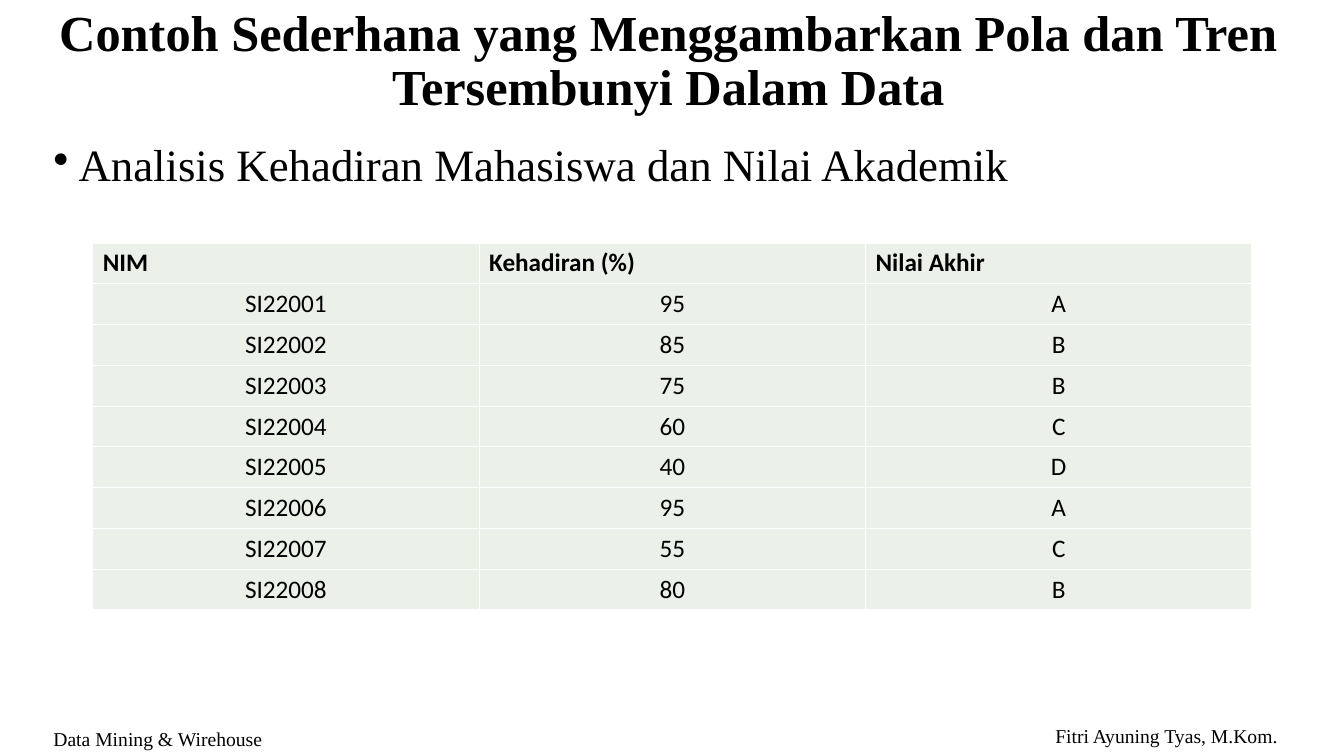
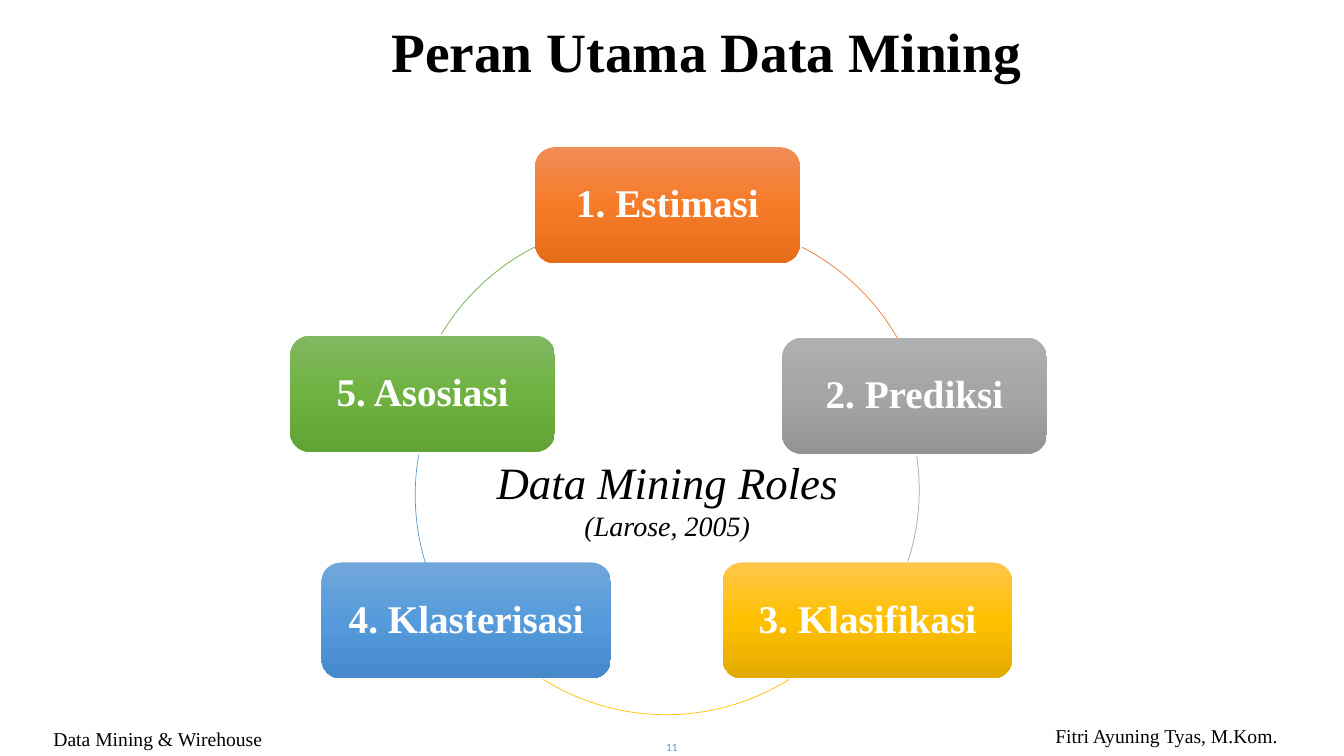
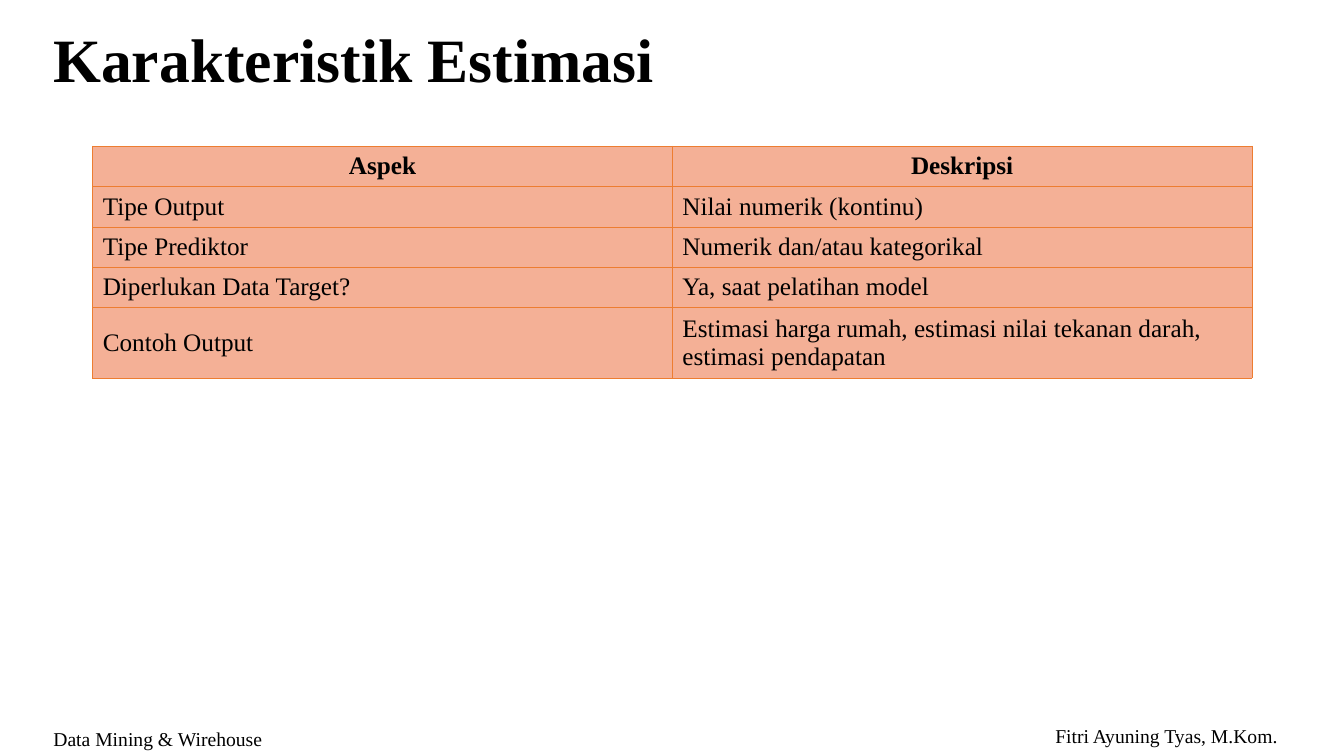
from copy import deepcopy

from pptx import Presentation
from pptx.dml.color import RGBColor
from pptx.enum.shapes import MSO_SHAPE
from pptx.enum.text import MSO_ANCHOR, PP_ALIGN
from pptx.oxml import parse_xml
from pptx.oxml.ns import nsdecls, qn
from pptx.util import Inches, Pt

LEFT, MID, JUST = PP_ALIGN.LEFT, PP_ALIGN.CENTER, PP_ALIGN.JUSTIFY
TOP, HALF = MSO_ANCHOR.TOP, MSO_ANCHOR.MIDDLE
ROUND, ARC = MSO_SHAPE.ROUNDED_RECTANGLE, MSO_SHAPE.ARC

BLACK = RGBColor(0x00, 0x00, 0x00)
WHITE = RGBColor(0xFF, 0xFF, 0xFF)
SAGE = RGBColor(0xEB, 0xF1, 0xE9)
PEACH = RGBColor(0xF4, 0xB0, 0x96)
RUST = RGBColor(0xED, 0x7D, 0x31)
GRAY = RGBColor(0xA5, 0xA5, 0xA5)
GOLD = RGBColor(0xFF, 0xC0, 0x00)
BLUE = RGBColor(0x5B, 0x9B, 0xD5)
GREEN = RGBColor(0x70, 0xAD, 0x47)
RUSTS = RGBColor(0xF1, 0x8C, 0x57), RGBColor(0xF6, 0x7B, 0x28), RGBColor(0xE5, 0x6C, 0x19)
GRAYS = RGBColor(0xAF, 0xAF, 0xAF), GRAY, RGBColor(0x93, 0x93, 0x93)
GOLDS = RGBColor(0xFF, 0xC6, 0x4B), GOLD, RGBColor(0xE3, 0xAB, 0x00)
BLUES = RGBColor(0x71, 0xA6, 0xDB), RGBColor(0x55, 0x9B, 0xDB), RGBColor(0x44, 0x8A, 0xCA)
GREENS = RGBColor(0x81, 0xB8, 0x61), RGBColor(0x6F, 0xB2, 0x42), RGBColor(0x62, 0xA3, 0x36)

SERIF, SANS = "Times New Roman", "Calibri"
PAGE = (0, 0, Inches(13.33), Inches(7.5))
HEAD = (3.23, 1.87, 93, 12.8)
FEET = [
    ("Fitri Ayuning Tyas, M.Kom.", (77.78, 95.07, 18.53, 4.53)),
    ("Data Mining & Wirehouse", (3.23, 95.47, 18.68, 4.53)),
]
MARKS = [
    ("NIM", "Kehadiran (%)", "Nilai Akhir"),
    ("SI22001", "95", "A"),
    ("SI22002", "85", "B"),
    ("SI22003", "75", "B"),
    ("SI22004", "60", "C"),
    ("SI22005", "40", "D"),
    ("SI22006", "95", "A"),
    ("SI22007", "55", "C"),
    ("SI22008", "80", "B"),
]
TRAITS = [
    ("Aspek", "Deskripsi"),
    ("Tipe Output", "Nilai numerik (kontinu)"),
    ("Tipe Prediktor", "Numerik dan/atau kategorikal"),
    ("Diperlukan Data Target?", "Ya, saat pelatihan model"),
    ("Contoh Output", "Estimasi harga rumah, estimasi nilai tekanan darah, estimasi pendapatan"),
]
ROLES = [
    ("1. Estimasi", (32.4, 0, 35), RUSTS, RUST, (23.07, 12.87), (297, 330)),
    ("2. Prediksi", (65.07, 32.87, 35), GRAYS, GRAY, (21.87, 19.13), (351.5, 18)),
    ("3. Klasifikasi", (57.2, 71.65, 38.27), GOLDS, GOLD, (19.07, 17.91), (58, 122)),
    ("4. Klasterisasi", (4.13, 71.65, 38.27), BLUES, BLUE, (16.53, 20), (163, 190)),
    ("5. Asosiasi", (0, 32.52, 35), GREENS, GREEN, (15.6, 12.87), (211, 243)),
]


def span(box, part):
    """Turn percentages of a box into a box on the slide."""
    x, y, w, h = box
    a, b, c, d = part
    return (int(x + w * a / 100), int(y + h * b / 100),
            int(w * c / 100), int(h * d / 100))


def style(item, form):
    """Set each format value on an object."""
    for name, value in form.items():
        setattr(item, name, value)


def put(para, text, size, align=LEFT, tint=BLACK, face=SERIF, lead=None, **form):
    """Write one formatted run into a paragraph."""
    style(para, {"alignment": align, "line_spacing": lead})
    run = para.add_run()
    run.text = text
    style(run.font, {"size": Pt(size), "name": face, **form})
    run.font.color.rgb = tint


def label(slide, box, text, size, anchor=TOP, **form):
    """Add a wrapped text box and return its frame."""
    frame = slide.shapes.add_textbox(*box).text_frame
    style(frame, {"word_wrap": True, "vertical_anchor": anchor})
    put(frame.paragraphs[0], text, size, **form)
    return frame


def point(slide, box, text):
    """Add a bulleted line of body text."""
    para = label(slide, box, text, 32, align=JUST, lead=0.9).paragraphs[0]
    para.space_before = Pt(10)
    props = para._p.get_or_add_pPr()
    props.set("marL", str(Inches(0.25)))
    props.set("indent", str(-Inches(0.25)))
    props.append(parse_xml(f'<a:buChar {nsdecls("a")} char="•"/>'))


def edge(cell, tint, width):
    """Draw the four borders of a cell."""
    props = cell._tc.get_or_add_tcPr()
    for i, side in enumerate("LRTB"):
        props.insert(i, parse_xml(
            f'<a:ln{side} {nsdecls("a")} w="{Pt(width)}"><a:solidFill>'
            f'<a:srgbClr val="{tint}"/></a:solidFill></a:ln{side}>'))


def grid(slide, box, rows, fill, rule, face, aligns):
    """Fill a box with a table whose first row is bold."""
    table = slide.shapes.add_table(len(rows), len(rows[0]), *box).table
    style(table, {"first_row": False, "horz_banding": False})
    for i, row in enumerate(rows):
        for j, text in enumerate(row):
            cell = table.cell(i, j)
            cell.vertical_anchor = HALF
            cell.fill.solid()
            cell.fill.fore_color.rgb = fill
            edge(cell, *rule)
            put(cell.text_frame.paragraphs[0], text, 18,
                align=aligns[i > 0], face=face, bold=i == 0)


def arc(slide, box, tint, turn):
    """Draw a thin arc between two angles of a circle."""
    shape = slide.shapes.add_shape(ARC, *box)
    shape.shadow.inherit = False
    shape.fill.background()
    shape.line.color.rgb = tint
    shape.line.width = Pt(0.5)
    for i, angle in enumerate(turn):
        shape.adjustments[i] = angle * 0.6


def card(slide, box, text, tints):
    """Draw a rounded card with a three-stop gradient."""
    shape = slide.shapes.add_shape(ROUND, *box)
    shape.shadow.inherit = False
    shape.line.fill.background()
    fill = shape.fill
    fill.gradient()
    fill.gradient_angle = 270
    stops = shape._element.spPr.find(".//" + qn("a:gsLst"))
    stops.append(deepcopy(stops[0]))
    for i, (stop, tint) in enumerate(zip(fill.gradient_stops, tints)):
        stop.position = i / 2
        stop.color.rgb = tint
    frame = shape.text_frame
    style(frame, {"word_wrap": True, "vertical_anchor": HALF})
    put(frame.paragraphs[0], text, 28, align=MID, tint=WHITE, lead=0.9, bold=True)


def ring(slide, box):
    """Lay the role cards and arcs around their heading."""
    for text, (x, y, w), tints, tint, spot, turn in ROLES:
        card(slide, span(box, (x, y, w, 20)), text, tints)
        arc(slide, span(box, (*spot, 61.33, 80)), tint, turn)
    frame = label(slide, span(box, (22.67, 52.17, 54.4, 17.04)),
                  "Data Mining Roles", 32, align=MID, italic=True)
    put(frame.add_paragraph(), "(Larose, 2005)", 20, align=MID, italic=True)


def start(deck, title, size, align=MID, part=HEAD):
    """Add a slide with the shared footers and title."""
    slide = deck.slides.add_slide(deck.slide_layouts[6])
    for text, foot in FEET:
        label(slide, span(PAGE, foot), text, 14)
    label(slide, span(PAGE, part), title, size, HALF, align=align, lead=0.9, bold=True)
    return slide


def main():
    """Build and save the deck."""
    deck = Presentation()
    style(deck, {"slide_width": PAGE[2], "slide_height": PAGE[3]})

    slide = start(deck, "Contoh Sederhana yang Menggambarkan Pola dan Tren "
                  "Tersembunyi Dalam Data", 36)
    point(slide, span(PAGE, (3.23, 18.27, 93, 78.8)),
          "Analisis Kehadiran Mahasiswa dan Nilai Akademik")
    grid(slide, span(PAGE, (6.9, 32.13, 86.25, 48.6)), MARKS, SAGE,
         (WHITE, 1), SANS, (LEFT, MID))

    slide = start(deck, "Peran Utama Data Mining", 39.6, part=(17.63, 2.27, 69.83, 10))
    label(slide, span(PAGE, (41.55, 97.6, 16.88, 2.4)), "11", 8, HALF,
          align=MID, tint=BLUE, face=SANS)
    ring(slide, span(PAGE, (21.6, 19.47, 56.25, 76.67)))

    slide = start(deck, "Karakteristik Estimasi", 44, LEFT)
    grid(slide, span(PAGE, (6.9, 19.33, 86.25, 25.13)), TRAITS, PEACH,
         (RUST, 0.5), SERIF, (MID, LEFT))
    deck.save("out.pptx")


if __name__ == "__main__":
    main()
